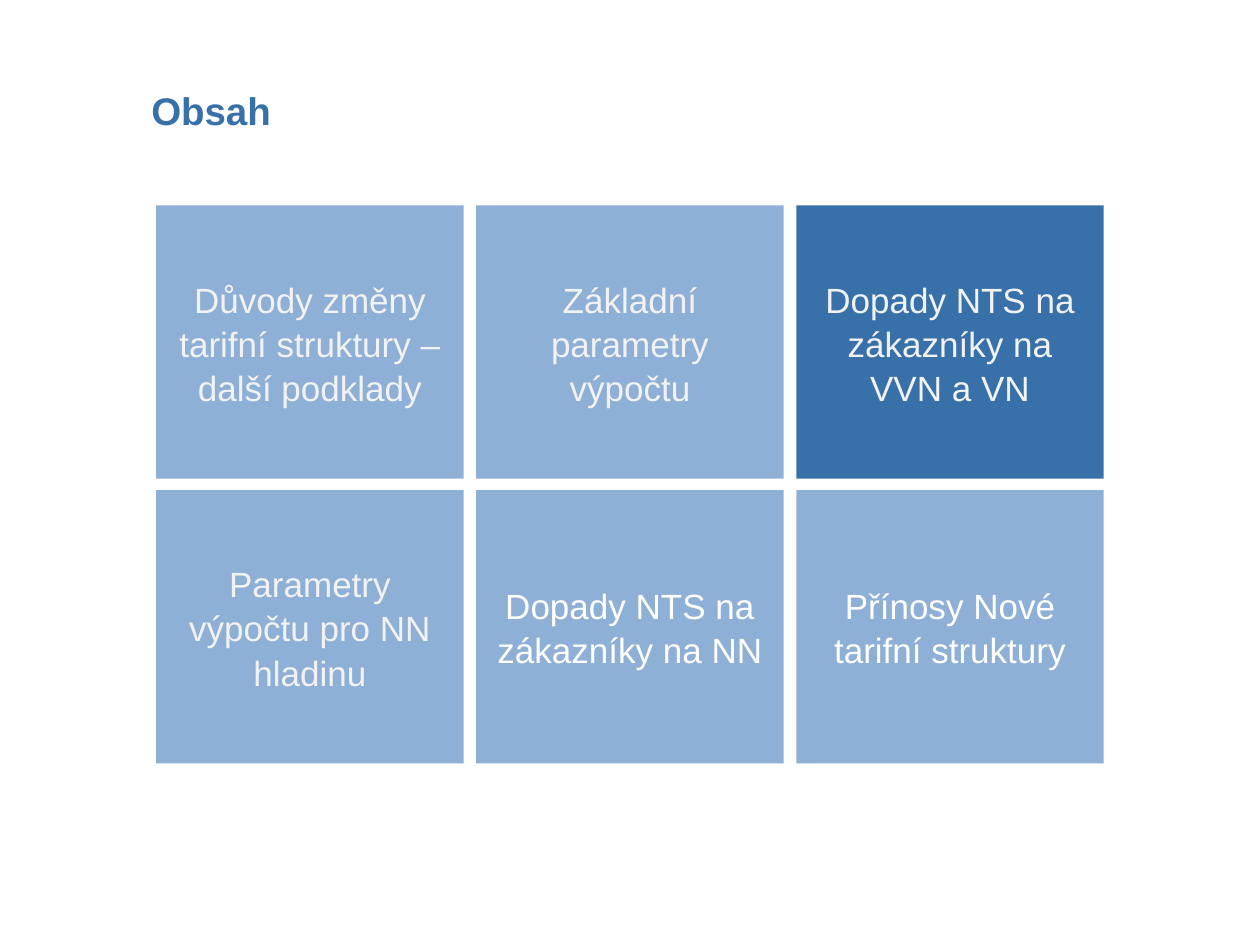
from dataclasses import dataclass

from pptx import Presentation
from pptx.dml.color import RGBColor
from pptx.enum.shapes import MSO_SHAPE
from pptx.enum.text import MSO_ANCHOR, MSO_AUTO_SIZE, PP_ALIGN
from pptx.slide import Slide
from pptx.text.text import TextFrame
from pptx.util import Inches, Pt

RECTANGLE = MSO_SHAPE.RECTANGLE
MIDDLE, BOTTOM = MSO_ANCHOR.MIDDLE, MSO_ANCHOR.BOTTOM
CENTER, RIGHT = PP_ALIGN.CENTER, PP_ALIGN.RIGHT
NO_AUTOFIT = MSO_AUTO_SIZE.NONE
TITLE_ONLY = 5


@dataclass(frozen=True)
class Theme:
    font: str = "Arial"
    white: RGBColor = RGBColor(0xFF, 0xFF, 0xFF)
    off_white: RGBColor = RGBColor(0xF2, 0xF2, 0xF2)
    light_blue: RGBColor = RGBColor(0x8E, 0xAF, 0xD6)
    blue: RGBColor = RGBColor(0x38, 0x71, 0xAA)
    title_size: int = 22
    topic_size: int = 20
    topic_spacing: float = 1.05


THEME = Theme()


@dataclass(frozen=True)
class Topic:
    text: str
    fill: RGBColor = THEME.light_blue
    color: RGBColor = THEME.off_white


TOPIC_ROWS = (
    (
        Topic("Důvody změny tarifní struktury – další podklady"),
        Topic("Základní parametry výpočtu"),
        Topic("Dopady NTS na zákazníky na VVN a VN", fill=THEME.blue),
    ),
    (
        Topic("Parametry výpočtu pro NN hladinu"),
        Topic("Dopady NTS na zákazníky na NN", color=THEME.white),
        Topic("Přínosy Nové tarifní struktury", color=THEME.white),
    ),
)

GRID_LEFT, GRID_TOP = 1.24, 1.63
TILE_WIDTH, TILE_HEIGHT = 2.44, 2.17
COLUMN_STEP, ROW_STEP = 2.54, 2.26


def write_text(frame: TextFrame, text: str, *, size: int, color: RGBColor,
               align: PP_ALIGN, anchor: MSO_ANCHOR,
               insets: tuple[float, float, float, float],
               bold: bool = False, spacing: float = 1.0) -> None:
    """Fill a frame with one paragraph; insets are left, top, right, bottom in inches."""
    frame.auto_size = NO_AUTOFIT
    frame.word_wrap = True
    frame.vertical_anchor = anchor
    (frame.margin_left, frame.margin_top,
     frame.margin_right, frame.margin_bottom) = map(Inches, insets)
    paragraph = frame.paragraphs[0]
    paragraph.alignment = align
    paragraph.line_spacing = spacing
    run = paragraph.add_run()
    run.text = text
    run.font.name = THEME.font
    run.font.size = Pt(size)
    run.font.bold = bold
    run.font.color.rgb = color


def add_title(slide: Slide, text: str) -> None:
    title = slide.shapes.title
    title.left, title.top = Inches(0), Inches(0)
    title.width, title.height = Inches(2.31), Inches(1.18)
    title.fill.solid()
    title.fill.fore_color.rgb = THEME.white
    write_text(title.text_frame, text, size=THEME.title_size, color=THEME.blue,
               align=RIGHT, anchor=BOTTOM, insets=(0.12, 0.39, 0.16, 0.12), bold=True)


def add_tile(slide: Slide, topic: Topic, left: float, top: float) -> None:
    tile = slide.shapes.add_shape(RECTANGLE, Inches(left), Inches(top),
                                  Inches(TILE_WIDTH), Inches(TILE_HEIGHT))
    tile.shadow.inherit = False
    tile.fill.solid()
    tile.fill.fore_color.rgb = topic.fill
    tile.line.fill.background()
    write_text(tile.text_frame, topic.text, size=THEME.topic_size, color=topic.color,
               align=CENTER, anchor=MIDDLE, insets=(0.12, 0.04, 0.12, 0.04),
               spacing=THEME.topic_spacing)


def main() -> None:
    presentation = Presentation()
    presentation.slide_width = Inches(10)
    presentation.slide_height = Inches(7.5)
    slide = presentation.slides.add_slide(presentation.slide_layouts[TITLE_ONLY])
    add_title(slide, "Obsah")
    for row, topics in enumerate(TOPIC_ROWS):
        for column, topic in enumerate(topics):
            add_tile(slide, topic, GRID_LEFT + column * COLUMN_STEP,
                     GRID_TOP + row * ROW_STEP)
    presentation.save("out.pptx")


if __name__ == "__main__":
    main()
